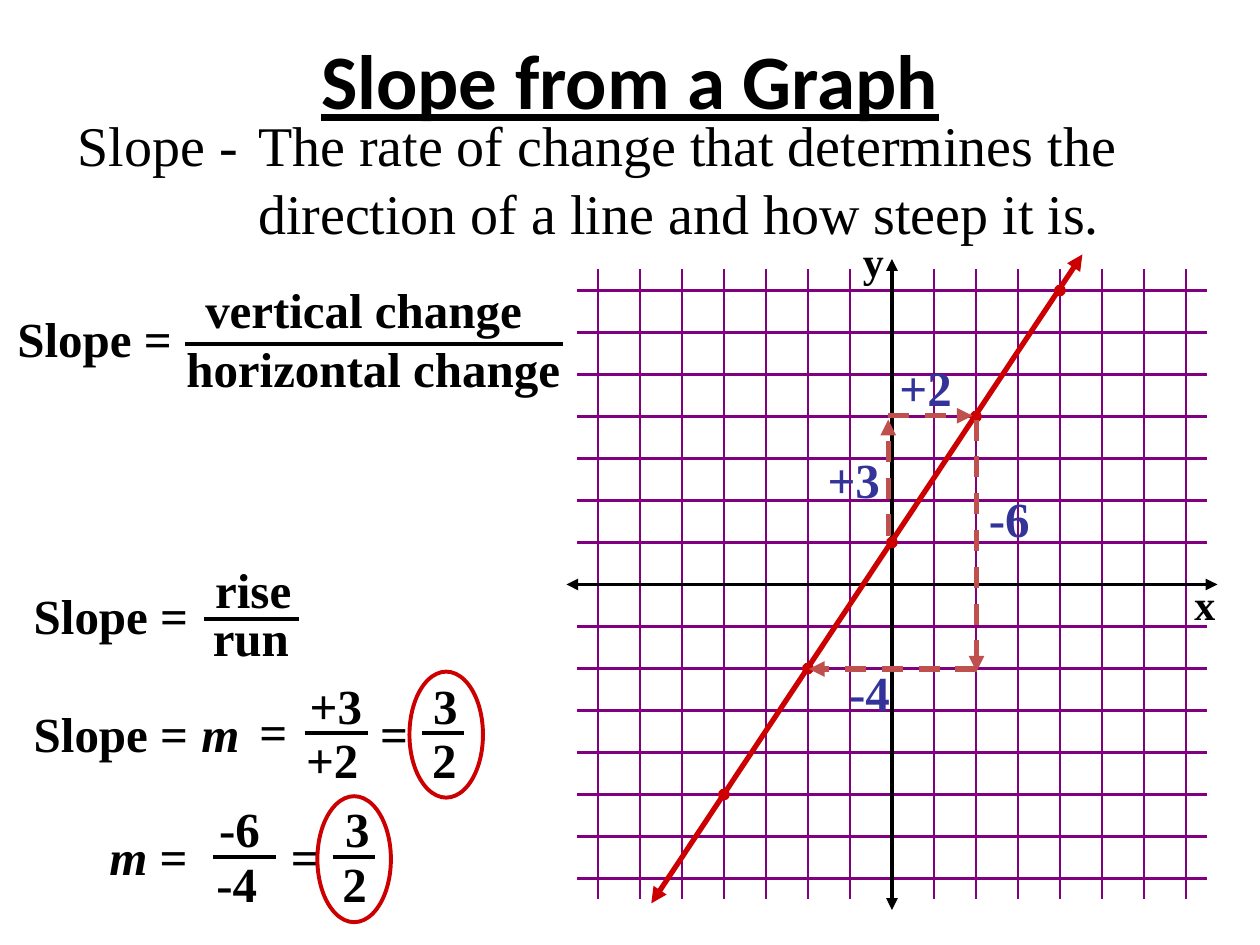
"""Build the slide that reads the slope of a line from its graph."""
from lxml import etree
from pptx import Presentation
from pptx.dml.color import RGBColor
from pptx.enum.dml import MSO_LINE
from pptx.enum.shapes import MSO_CONNECTOR, MSO_SHAPE
from pptx.enum.text import MSO_ANCHOR, MSO_AUTO_SIZE, PP_ALIGN
from pptx.oxml.ns import qn
from pptx.util import Pt

STRAIGHT = MSO_CONNECTOR.STRAIGHT
OVAL = MSO_SHAPE.OVAL
DASH = MSO_LINE.DASH
FIT = MSO_AUTO_SIZE.SHAPE_TO_FIT_TEXT
MIDDLE = MSO_ANCHOR.MIDDLE
CENTER = PP_ALIGN.CENTER

THEME = {
    "ink": RGBColor(0x00, 0x00, 0x00),
    "grid": RGBColor(0x80, 0x00, 0x80),
    "graph": RGBColor(0xCC, 0x00, 0x00),
    "step": RGBColor(0xC0, 0x50, 0x4D),
    "count": RGBColor(0x33, 0x33, 0x99),
    "title_font": "Calibri",
    "body_font": "Times New Roman",
    "title_size": 44,
    "definition_size": 32,
    "formula_size": 28,
    "axis_size": 24,
}

deck = Presentation()
deck.slide_width, deck.slide_height = Pt(720), Pt(540)
slide = deck.slides.add_slide(deck.slide_layouts[5])
shapes = slide.shapes


def add_text(text, left, top, width, size="formula_size", color="ink", bold=True, italic=False):
    points = THEME[size]
    box = shapes.add_textbox(Pt(left), Pt(top), Pt(width), Pt(points * 1.2 + 7.2))
    frame = box.text_frame
    frame.text = text
    frame.word_wrap = False
    frame.auto_size = FIT
    for paragraph in frame.paragraphs:
        font = paragraph.runs[0].font
        font.name, font.size = THEME["body_font"], Pt(points)
        font.bold, font.italic = bold, italic
        font.color.rgb = THEME[color]
    return frame


def add_line(x1, y1, x2, y2, color="ink", width=2.25, arrows=(), dash=None):
    connector = shapes.add_connector(STRAIGHT, Pt(x1), Pt(y1), Pt(x2), Pt(y2))
    connector.line.color.rgb = THEME[color]
    connector.line.width = Pt(width)
    connector.line.dash_style = dash
    for end in arrows:
        etree.SubElement(connector.line._get_or_add_ln(), qn(f"a:{end}"), type="triangle")
    etree.SubElement(connector._element.spPr, qn("a:effectLst"))


title = shapes.title
title.left, title.top, title.width, title.height = Pt(36), Pt(0), Pt(648), Pt(90)
title.text_frame.text = "Slope from a Graph"
title.text_frame.vertical_anchor = MIDDLE
heading = title.text_frame.paragraphs[0]
heading.alignment = CENTER
heading_font = heading.runs[0].font
heading_font.name, heading_font.size = THEME["title_font"], Pt(THEME["title_size"])
heading_font.bold = heading_font.underline = True
heading_font.color.rgb = THEME["ink"]

definition = "The rate of change that determines the\ndirection of a line and how steep it is."
add_text("Slope -", 37.4, 59.8, 113.8, "definition_size", bold=False)
add_text(definition, 140.4, 59.8, 513.4, "definition_size", bold=False)

UNIT, ORIGIN_X, ORIGIN_Y, HALF = 24, 509.7, 334, 180
for step in range(-7, 8):
    if step:
        x, y = ORIGIN_X + step * UNIT, ORIGIN_Y + step * UNIT
        add_line(x, ORIGIN_Y - HALF, x, ORIGIN_Y + HALF, "grid", 1.5)
        add_line(ORIGIN_X - HALF, y, ORIGIN_X + HALF, y, "grid", 1.5)

both_ends = ("headEnd", "tailEnd")
reach = HALF + 6
add_line(ORIGIN_X, ORIGIN_Y - reach, ORIGIN_X, ORIGIN_Y + reach, arrows=both_ends)
add_line(ORIGIN_X - reach, ORIGIN_Y, ORIGIN_X + reach, ORIGIN_Y, arrows=both_ends)
add_text("y", 486, 131, 28, "axis_size")
add_text("x", 675.4, 327, 28, "axis_size")

DOT = 6
for x, y in [(-4, -5), (-2, -2), (0, 1), (2, 4), (4, 7)]:
    dot = shapes.add_shape(OVAL, Pt(ORIGIN_X + x * UNIT - DOT / 2),
                           Pt(ORIGIN_Y - y * UNIT - DOT / 2), Pt(DOT), Pt(DOT))
    dot.shadow.inherit = False
    dot.fill.solid()
    dot.fill.fore_color.rgb = dot.line.color.rgb = THEME["graph"]
    dot.line.width = Pt(0.75)
add_line(618.5, 145.4, 372.2, 516.2, "graph", 3, both_ends)

moves = [
    ("+3", 465.8, 253.4, 46, (507.6, 306, 507.6, 239.8)),
    ("+2", 506.9, 200.9, 46, (507.6, 237.6, 555.8, 237.6)),
    ("-6", 558, 275.8, 40, (558, 239.8, 558, 383.8)),
    ("-4", 478.1, 375.1, 40, (558, 382.3, 462.2, 382.3)),
]
for count, left, top, width, ends in moves:
    add_line(*ends, "step", 3, ("tailEnd",), DASH)
    add_text(count, left, top, width, color="count")

for left, top in [(2.9, 172.8), (12.2, 331.2), (12.2, 398.2)]:
    add_text("Slope =", left, top, 112)
for left, top in [(141.1, 397.4), (210.2, 398.2), (159.1, 468.7)]:
    add_text("=", left, top, 38)
add_text("m", 108, 398.2, 40, italic=True)
second_slope = add_text("m", 55.4, 468.7, 62, italic=True).paragraphs[0]
equals = second_slope.add_run()
equals.text = " ="
equals.font.name, equals.font.size = THEME["body_font"], Pt(THEME["formula_size"])
equals.font.bold, equals.font.color.rgb = True, THEME["ink"]

fractions = [
    ("vertical change", 110.2, 198, "horizontal change", 99.4, 230, 156.2, 33.8, 40.3, 105.8, 216),
    ("rise", 115.9, 62, "run", 114.5, 62, 316.1, 27.4, 37.4, 116.6, 54),
    ("+3", 169.9, 46, "+2", 167.8, 46, 382.3, 31, 36.7, 174.2, 36),
    ("3", 240.5, 30, "2", 239.8, 30, 382.3, 31, 36.7, 241.2, 24),
    ("-6", 118.1, 40, "-4", 116.6, 40, 452.9, 31, 36.7, 121.7, 36),
    ("3", 190.1, 30, "2", 188.6, 30, 452.9, 31, 36.7, 190.1, 24),
]
for over, over_x, over_w, under, under_x, under_w, top, drop, bar_drop, bar_x, bar_w in fractions:
    add_text(over, over_x, top, over_w)
    add_text(under, under_x, top + drop, under_w)
    add_line(bar_x, top + bar_drop, bar_x + bar_w, top + bar_drop)

for left, top in [(234, 383.8), (181.4, 455)]:
    answer_ring = shapes.add_shape(OVAL, Pt(left), Pt(top), Pt(42), Pt(72))
    answer_ring.shadow.inherit = False
    answer_ring.fill.background()
    answer_ring.line.color.rgb = THEME["graph"]
    answer_ring.line.width = Pt(2.25)

deck.save("out.pptx")
